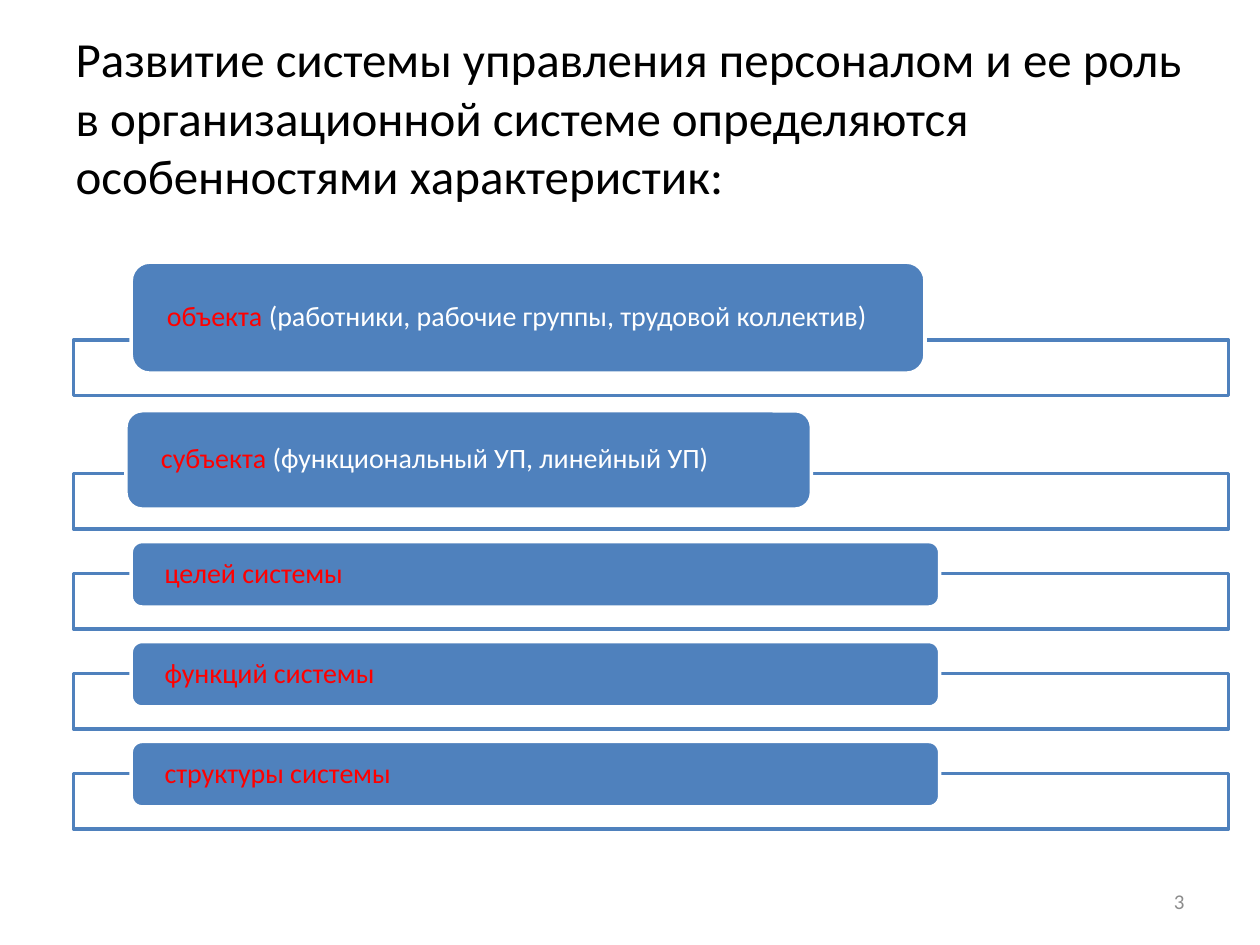
from dataclasses import dataclass

from pptx import Presentation
from pptx.dml.color import RGBColor as RGB
from pptx.enum.shapes import MSO_SHAPE as Shape
from pptx.enum.text import MSO_ANCHOR as Anchor, MSO_AUTO_SIZE as AutoSize, PP_ALIGN as Align
from pptx.util import Pt


@dataclass(frozen=True)
class Theme:
    font: str = "Calibri"
    title_size: float = 28
    item_size: float = 16
    number_size: float = 12
    text: RGB = RGB(0, 0, 0)
    white: RGB = RGB(255, 255, 255)
    blue: RGB = RGB(0x4F, 0x81, 0xBD)
    red: RGB = RGB(255, 0, 0)
    gray: RGB = RGB(0x8C, 0x8C, 0x8C)


class SlideBuilder:
    def __init__(self, slide, theme):
        self.slide = slide
        self.theme = theme

    def add_runs(self, tf, runs, size, align=Align.LEFT):
        """Fill the first paragraph with (text, colour) runs."""
        tf.word_wrap = True
        tf.auto_size = AutoSize.NONE
        tf.vertical_anchor = Anchor.MIDDLE
        p = tf.paragraphs[0]
        p.alignment = align
        for text, color in runs:
            r = p.add_run()
            r.text = text
            r.font.name = self.theme.font
            r.font.size = Pt(size)
            r.font.color.rgb = color
        return p

    def title(self, text, left, top, width, height):
        sp = self.slide.shapes.title
        sp.left, sp.top, sp.width, sp.height = map(Pt, (left, top, width, height))
        self.add_runs(sp.text_frame, [(text, self.theme.text)], self.theme.title_size)

    def box(self, kind, fill, line, left, top, width, height):
        sp = self.slide.shapes.add_shape(kind, *map(Pt, (left, top, width, height)))
        sp.shadow.inherit = False
        sp.fill.solid()
        sp.fill.fore_color.rgb = fill
        sp.line.color.rgb = line
        sp.line.width = Pt(2)
        return sp

    def frame(self, left, top, width, height):
        self.box(Shape.RECTANGLE, self.theme.white, self.theme.blue, left, top, width, height)

    def label(self, runs, left, top, width, height):
        sp = self.box(Shape.ROUNDED_RECTANGLE, self.theme.blue, self.theme.white,
                      left, top, width, height)
        tf = sp.text_frame
        tf.margin_left = tf.margin_right = Pt(17.3)
        tf.margin_top = tf.margin_bottom = 0
        p = self.add_runs(tf, runs, self.theme.item_size)
        p.line_spacing = 0.9

    def page_number(self, number, left, top, width, height):
        sp = self.slide.shapes.add_textbox(*map(Pt, (left, top, width, height)))
        self.add_runs(sp.text_frame, [(number, self.theme.gray)], self.theme.number_size,
                      Align.RIGHT)


def main():
    prs = Presentation()
    prs.slide_width, prs.slide_height = Pt(720), Pt(540)
    theme = Theme()
    s = SlideBuilder(prs.slides.add_slide(prs.slide_layouts[5]), theme)

    s.title("Развитие системы управления персоналом и ее роль в организационной "
            "системе определяются особенностями характеристик:", 36, 21.6, 648, 90)

    # Frame top, label rise above the frame, label left, width, height, runs
    rows = [
        (194.4, 44.6, 75, 453.6, 63.4,
         [("объекта", theme.red),
          (" (работники, рабочие группы, трудовой коллектив)", theme.white)]),
        (270.7, 36, 72, 391.7, 56.2,
         [("субъекта ", theme.red), ("(функциональный УП, линейный УП)", theme.white)]),
    ]
    first_top, pitch = 327.8, 57.1
    for i, text in enumerate(("целей системы", "функций системы", "структуры системы")):
        rows.append((first_top + i * pitch, 18.3, 75, 462, 37.4, [(text, theme.red)]))

    for top, rise, left, width, height, runs in rows:
        s.frame(42, top, 660, 31.7)
        s.label(runs, left, top - rise, width, height)

    s.page_number("3", 516, 500.5, 168, 28.8)
    prs.save("out.pptx")


if __name__ == "__main__":
    main()
